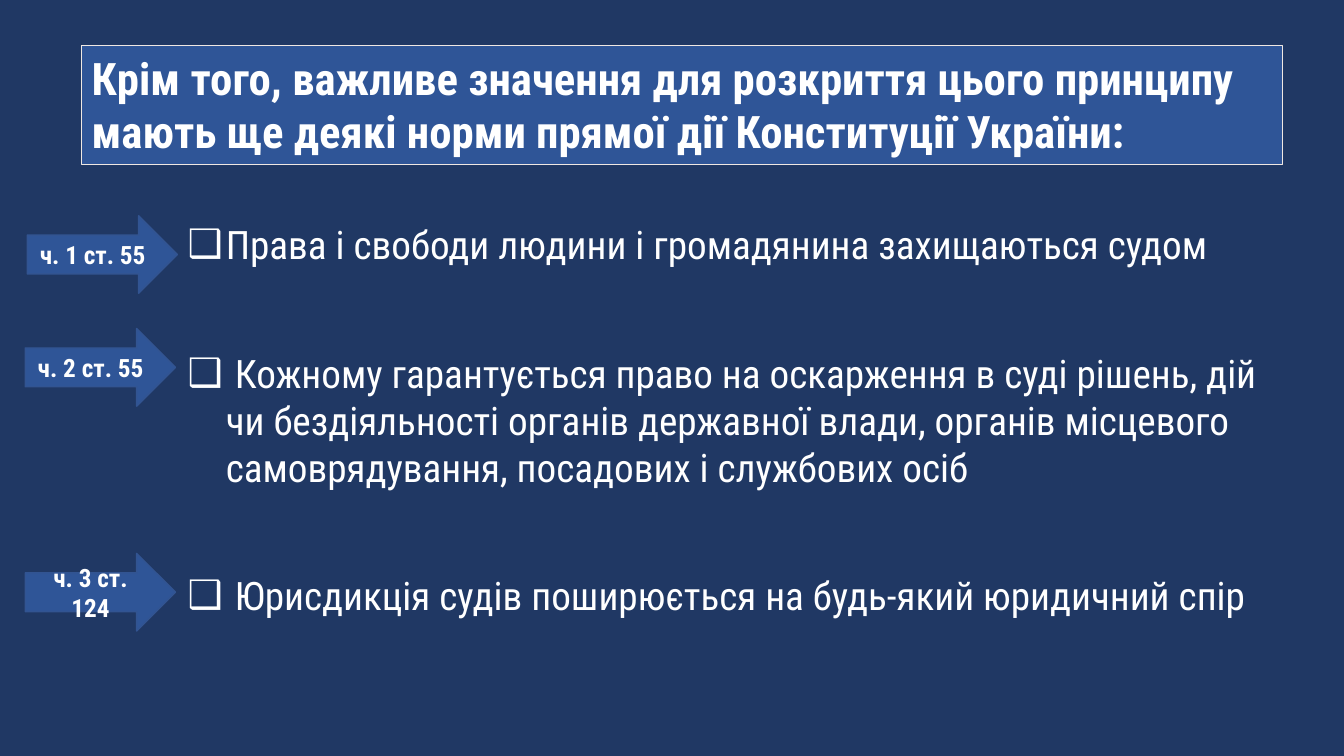
from lxml import etree
from pptx import Presentation
from pptx.dml.color import RGBColor
from pptx.enum.shapes import MSO_SHAPE
from pptx.enum.text import MSO_ANCHOR, MSO_AUTO_SIZE, PP_ALIGN
from pptx.oxml.ns import qn
from pptx.util import Inches, Pt

NAVY = RGBColor(0x20, 0x38, 0x64)
BLUE = RGBColor(0x2F, 0x55, 0x97)
ARROW_EDGE = RGBColor(0x32, 0x54, 0x91)
CREAM = RGBColor(0xF0, 0xE8, 0xE3)
WHITE = RGBColor(0xFF, 0xFF, 0xFF)
FONT = "Roboto Condensed"


def write(p, text, size, bold=False, align=PP_ALIGN.LEFT, after=0):
    p.alignment = align
    p.line_spacing = 1.0
    p.space_before = Pt(0)
    p.space_after = Pt(after)
    r = p.add_run()
    r.text = text
    r.font.name = FONT
    r.font.size = Pt(size)
    r.font.bold = bold
    r.font.color.rgb = WHITE


def place(sp, left, top, width, height):
    sp.left, sp.top = Inches(left), Inches(top)
    sp.width, sp.height = Inches(width), Inches(height)


prs = Presentation()
prs.slide_width, prs.slide_height = Inches(13.33), Inches(7.5)
slide = prs.slides.add_slide(prs.slide_layouts[1])
slide.background.fill.solid()
slide.background.fill.fore_color.rgb = NAVY

# Title in a framed box
title = slide.shapes.title
place(title, 0.81, 0.45, 11.91, 1.18)
title.fill.solid()
title.fill.fore_color.rgb = BLUE
title.line.color.rgb = CREAM
title.line.width = Pt(0.75)
tf = title.text_frame
tf.auto_size = MSO_AUTO_SIZE.NONE
tf.vertical_anchor = MSO_ANCHOR.TOP
write(tf.paragraphs[0],
      "Крім того, важливе значення для розкриття цього принципу "
      "мають ще деякі норми прямої дії Конституції України:",
      size=32, bold=True)

# Constitutional provisions
provisions = [
    "Права і свободи людини і громадянина захищаються судом",
    " Кожному гарантується право на оскарження в суді рішень, дій чи "
    "бездіяльності органів державної влади, органів місцевого "
    "самоврядування, посадових і службових осіб",
    " Юрисдикція судів поширюється на будь-який юридичний спір",
]
body = slide.placeholders[1]
place(body, 1.76, 2.14, 10.89, 4.83)
tf = body.text_frame
tf.auto_size = MSO_AUTO_SIZE.NONE
tf.vertical_anchor = MSO_ANCHOR.TOP
for i, text in enumerate(provisions):
    p = tf.add_paragraph() if i else tf.paragraphs[0]
    write(p, text, size=28, after=58)
    pPr = p._p.get_or_add_pPr()
    pPr.set("marL", str(Inches(0.38)))
    pPr.set("indent", str(-Inches(0.38)))
    etree.SubElement(pPr, qn("a:buChar")).set("char", "❑")

# Article arrows
articles = [("ч. 1 ст. 55", 0.27, 2.14),
            ("ч. 2 ст. 55", 0.25, 3.26),
            ("ч. 3 ст. 124", 0.25, 5.49)]
for text, left, top in articles:
    sp = slide.shapes.add_shape(MSO_SHAPE.RIGHT_ARROW, Inches(left), Inches(top),
                                Inches(1.49), Inches(0.77))
    sp.shadow.inherit = False
    sp.fill.solid()
    sp.fill.fore_color.rgb = BLUE
    sp.line.color.rgb = ARROW_EDGE
    sp.line.width = Pt(1)
    tf = sp.text_frame
    tf.word_wrap = True
    tf.vertical_anchor = MSO_ANCHOR.MIDDLE
    write(tf.paragraphs[0], text, size=18, bold=True, align=PP_ALIGN.CENTER)

prs.save("out.pptx")
